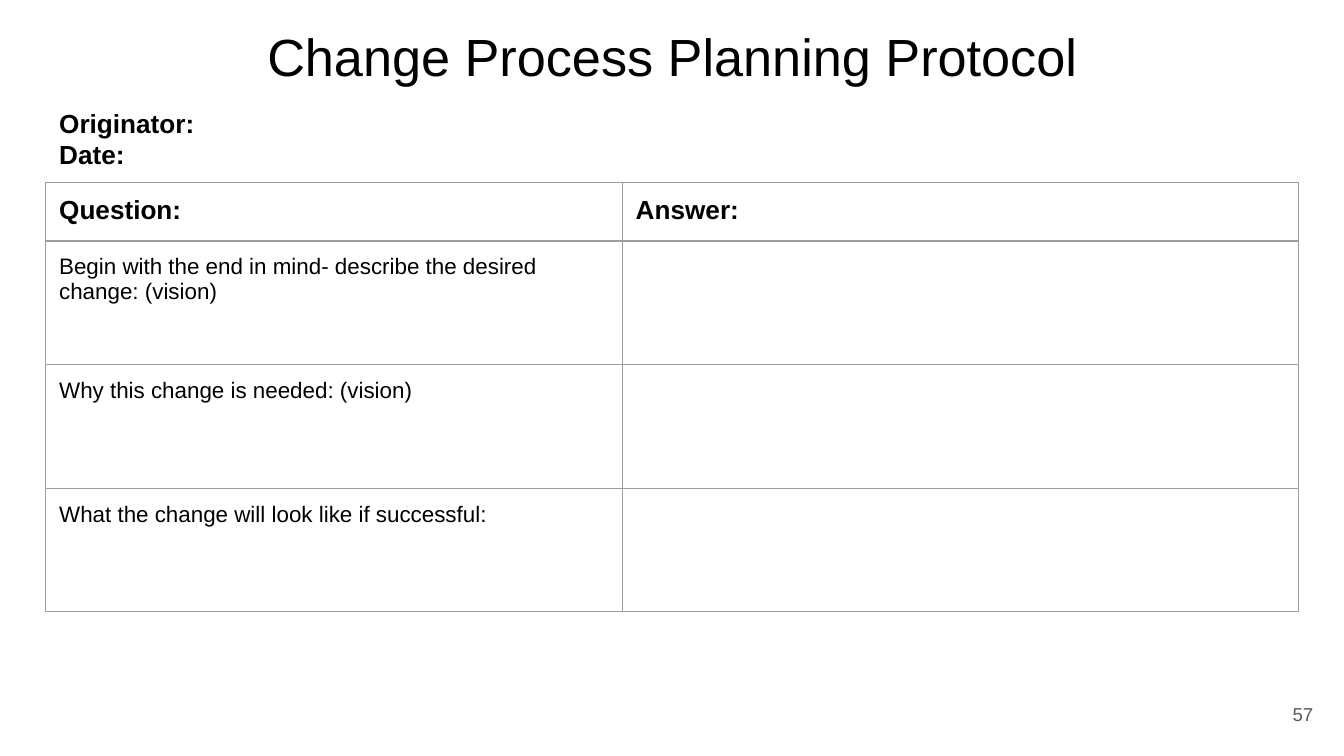
from dataclasses import dataclass

from lxml import etree
from pptx import Presentation
from pptx.dml.color import RGBColor
from pptx.enum.text import MSO_ANCHOR, MSO_AUTO_SIZE, PP_ALIGN
from pptx.oxml.ns import qn
from pptx.util import Inches, Pt

TOP, MIDDLE = MSO_ANCHOR.TOP, MSO_ANCHOR.MIDDLE
LEFT, CENTER, RIGHT = PP_ALIGN.LEFT, PP_ALIGN.CENTER, PP_ALIGN.RIGHT
NO_FIT = MSO_AUTO_SIZE.NONE
TITLE_ONLY = 5

SLIDE_WIDTH = Inches(10)
SLIDE_HEIGHT = SLIDE_WIDTH * 9 // 16
MARGIN = 0.34
CONTENT_WIDTH = 10 - 2 * MARGIN


@dataclass(frozen=True)
class Theme:
    """Colours, font and type sizes of the slide."""
    font: str = "Arial"
    ink: str = "000000"
    muted: str = "595959"
    rule: str = "9E9E9E"
    title: int = 28
    heading: int = 14
    body: int = 12
    number: int = 10
    rule_width: float = 0.75
    inset: float = 0.1


THEME = Theme()

QUESTIONS = [
    "Begin with the end in mind- describe the desired change: (vision)",
    "Why this change is needed: (vision)",
    "What the change will look like if successful:",
]


def style(paragraph, size, bold=False, color=THEME.ink, align=LEFT):
    """Format a paragraph and its runs."""
    paragraph.alignment = align
    for run in paragraph.runs:
        run.font.name = THEME.font
        run.font.size = Pt(size)
        run.font.bold = bold
        run.font.color.rgb = RGBColor.from_string(color)


def set_insets(holder):
    """Give a text frame or table cell equal margins."""
    inset = Inches(THEME.inset)
    holder.margin_left = holder.margin_right = inset
    holder.margin_top = holder.margin_bottom = inset


def place(shape, box):
    """Move a shape to a box given in inches."""
    shape.left, shape.top, shape.width, shape.height = map(Inches, box)


def add_heading(slide, box):
    """Fill the title placeholder with the title and its two form fields."""
    heading = slide.shapes.title
    place(heading, box)
    frame = heading.text_frame
    frame.text = "Change Process Planning Protocol\nOriginator:\vDate:"
    frame.word_wrap = True
    frame.auto_size = NO_FIT
    frame.vertical_anchor = TOP
    set_insets(frame)
    title, fields = frame.paragraphs
    style(title, THEME.title, align=CENTER)
    title.space_after = Pt(11)
    style(fields, THEME.heading, bold=True)


def outline(cell):
    """Draw the four borders of a table cell."""
    properties = cell._tc.get_or_add_tcPr()
    for side in ("lnL", "lnR", "lnT", "lnB"):
        line = etree.SubElement(properties, qn(f"a:{side}"), w=str(Pt(THEME.rule_width)))
        fill = etree.SubElement(line, qn("a:solidFill"))
        etree.SubElement(fill, qn("a:srgbClr"), val=THEME.rule)


def add_questions(slide, box):
    """Add the question and answer table, sized by shares of its box."""
    rows = [("Question:", "Answer:")] + [(question, "") for question in QUESTIONS]
    table = slide.shapes.add_table(len(rows), 2, *map(Inches, box)).table
    table.first_row = table.horz_banding = False
    width, height = box[2:]
    header_height = 0.43
    question_width = round(width * 0.46, 2)
    table.columns[0].width = Inches(question_width)
    table.columns[1].width = Inches(width - question_width)
    for index, texts in enumerate(rows):
        is_header = index == 0
        row_height = header_height if is_header else (height - header_height) / len(QUESTIONS)
        table.rows[index].height = Inches(row_height)
        for cell, text in zip(table.rows[index].cells, texts):
            cell.text = text
            set_insets(cell)
            outline(cell)
            cell.fill.background()
            size = THEME.heading if is_header else THEME.body
            style(cell.text_frame.paragraphs[0], size, bold=is_header)


def add_page_number(slide, box):
    """Add the page number at the lower right."""
    frame = slide.shapes.add_textbox(*map(Inches, box)).text_frame
    frame.text = "57"
    frame.word_wrap = True
    frame.vertical_anchor = MIDDLE
    set_insets(frame)
    style(frame.paragraphs[0], THEME.number, color=THEME.muted, align=RIGHT)


def main():
    """Build and save the slide."""
    deck = Presentation()
    deck.slide_width, deck.slide_height = SLIDE_WIDTH, SLIDE_HEIGHT
    slide = deck.slides.add_slide(deck.slide_layouts[TITLE_ONLY])
    add_heading(slide, (MARGIN, 0.08, CONTENT_WIDTH, 0.94))
    add_page_number(slide, (9.27, 5.1, 0.6, 0.43))
    add_questions(slide, (MARGIN, 1.36, CONTENT_WIDTH, 3.19))
    deck.save("out.pptx")


if __name__ == "__main__":
    main()
